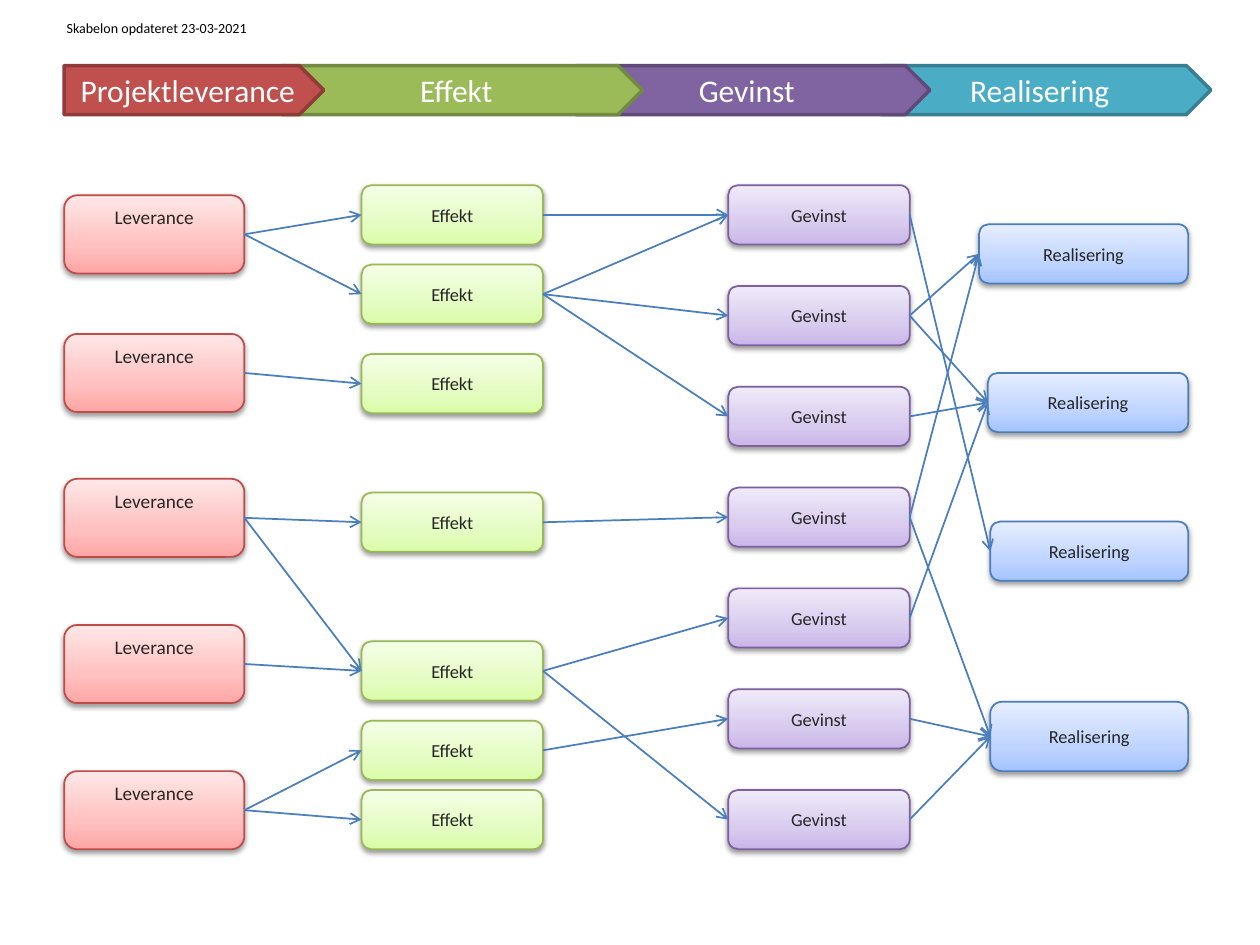
import copy

import pptx
import pptx.dml.color
import pptx.enum.shapes
import pptx.enum.text
import pptx.oxml
import pptx.oxml.ns
import pptx.util

Inches = pptx.util.Inches
Pt = pptx.util.Pt
RGB = pptx.dml.color.RGBColor.from_string
qn = pptx.oxml.ns.qn
KINDS = pptx.enum.shapes.MSO_SHAPE
ANCHOR = pptx.enum.text.MSO_ANCHOR
ALIGN = pptx.enum.text.PP_ALIGN

COLORS = {
    "white": "FFFFFF", "black": "000000", "text": "262626", "arrow": "4B7EBC",
    "red": "C0504D", "red edge": "8E3B39",
    "green": "9BBB59", "green edge": "738A42",
    "purple": "8064A2", "purple edge": "5F4A78",
    "teal": "4BACC6", "teal edge": "377F92",
}
# Box edge, then the fade from bottom to top
FADES = {
    "Leverance": ("BF4C48", "FFA6A5", "FFC0BF", "FFE7E7"),
    "Effekt": ("98B955", "DAFDA7", "E4FCC2", "F5FFE7"),
    "Gevinst": ("7D60A0", "C9B5E8", "D8CBEE", "F0EAF9"),
    "Realisering": ("4B7EBC", "A4C4FF", "BFD4FF", "E6EEFF"),
}
STOPS = (0, 0.35, 1)
SHADOW = (
    f'<a:outerShdw xmlns:a="{pptx.oxml.ns.nsuri("a")}" blurRad="{Pt(3.1)}" '
    f'dist="{Pt(1.6)}" dir="5400000" rotWithShape="0">'
    '<a:srgbClr val="000000"><a:alpha val="38000"/></a:srgbClr></a:outerShdw>'
)


def write(shape, text, size, color, anchor=ANCHOR.MIDDLE, align=ALIGN.CENTER):
    frame = shape.text_frame
    frame.text = text
    line = frame.paragraphs[0]
    line.font.color.rgb = RGB(COLORS[color])
    for part, form in (
        (frame, {"word_wrap": True, "vertical_anchor": anchor}),
        (line, {"alignment": align}),
        (line.font, {"name": "Calibri", "size": Pt(size)}),
    ):
        for name, value in form.items():
            setattr(part, name, value)


def fade(shape, tints):
    """Fill with a three-stop gradient that runs from bottom to top."""
    shape.fill.gradient()
    shape.fill.gradient_angle = 90
    stops = shape._element.spPr.find(".//" + qn("a:gsLst"))
    stops.append(copy.deepcopy(stops[-1]))
    for stop, place, tint in zip(shape.fill.gradient_stops, STOPS, tints):
        stop.position = place
        stop.color.rgb = RGB(tint)


deck = pptx.Presentation()
deck.slide_width, deck.slide_height = Inches(10), Inches(7.5)
shapes = deck.slides.add_slide(deck.slide_layouts[6]).shapes

# Phase headers, from the right so that each tip lies over the next phase
for text, left, width, hue in (
    ("Realisering", 6.99, 2.62, "teal"),
    ("Gevinst", 4.57, 2.81, "purple"),
    ("Effekt", 2.24, 2.86, "green"),
    ("Projektleverance", 0.51, 2.06, "red"),
):
    phase = shapes.add_shape(
        KINDS.PENTAGON, Inches(left), Inches(0.52), Inches(width), Inches(0.39))
    phase.shadow.inherit = False
    phase.fill.solid()
    phase.fill.fore_color.rgb = RGB(COLORS[hue])
    phase.line.color.rgb = RGB(COLORS[hue + " edge"])
    phase.line.width = Pt(2)
    write(phase, text, 18, "white")

# Boxes by column: left, top, width, height
grid = {
    "Leverance": [(0.51, top, 1.43, 0.62) for top in (1.55, 2.65, 3.8, 4.96, 6.12)],
    "Effekt": [(2.87, top, 1.44, 0.47)
               for top in (1.47, 2.1, 2.81, 3.91, 5.09, 5.72, 6.27)],
    "Gevinst": [(5.78, 1.47 + 0.8 * row, 1.44, 0.47) for row in range(7)],
    "Realisering": [(7.77, 1.78, 1.66, 0.47), (7.84, 2.96, 1.59, 0.47),
                    (7.86, 4.14, 1.57, 0.47), (7.86, 5.57, 1.57, 0.55)],
}
boxes = {}
for text, places in grid.items():
    edge, *tints = FADES[text]
    boxes[text] = []
    for place in places:
        box = shapes.add_shape(
            KINDS.FLOWCHART_ALTERNATE_PROCESS, *[Inches(n) for n in place])
        fade(box, tints)
        box.line.color.rgb = RGB(edge)
        box.line.width = Pt(1)
        box.shadow.inherit = False
        effects = box._element.spPr.find(qn("a:effectLst"))
        effects.append(pptx.oxml.parse_xml(SHADOW))
        if text == "Leverance":
            write(box, text, 11, "text", ANCHOR.TOP)
        else:
            write(box, text, 10.5, "text")
        boxes[text].append(box)

# Arrows as (row in first column, row in next column)
links = {
    ("Leverance", "Effekt"): [
        (0, 0), (0, 1), (1, 2), (2, 3), (2, 4), (3, 4), (4, 5), (4, 6)],
    ("Effekt", "Gevinst"): [
        (0, 0), (1, 0), (1, 1), (1, 2), (3, 3), (4, 4), (4, 6), (5, 5)],
    ("Gevinst", "Realisering"): [
        (0, 2), (1, 0), (1, 1), (2, 1), (3, 0), (3, 3), (4, 1), (5, 3), (6, 3)],
}
for (start, end), pairs in links.items():
    for row, goal in pairs:
        arrow = shapes.add_connector(
            pptx.enum.shapes.MSO_CONNECTOR.STRAIGHT, 0, 0, 0, 0)
        arrow.begin_connect(boxes[start][row], 3)
        arrow.end_connect(boxes[end][goal], 1)
        arrow.line.color.rgb = RGB(COLORS["arrow"])
        arrow.line.width = Pt(1)
        props = arrow._element.spPr
        head = pptx.oxml.xmlchemy.OxmlElement("a:tailEnd")
        head.set("type", "arrow")
        props.find(qn("a:ln")).append(head)
        props.append(pptx.oxml.xmlchemy.OxmlElement("a:effectLst"))

note = shapes.add_textbox(Inches(0.43), Inches(0.11), Inches(1.79), Inches(0.24))
write(note, "Skabelon opdateret 23-03-2021", 8, "black", ANCHOR.TOP, ALIGN.LEFT)

deck.save("out.pptx")
